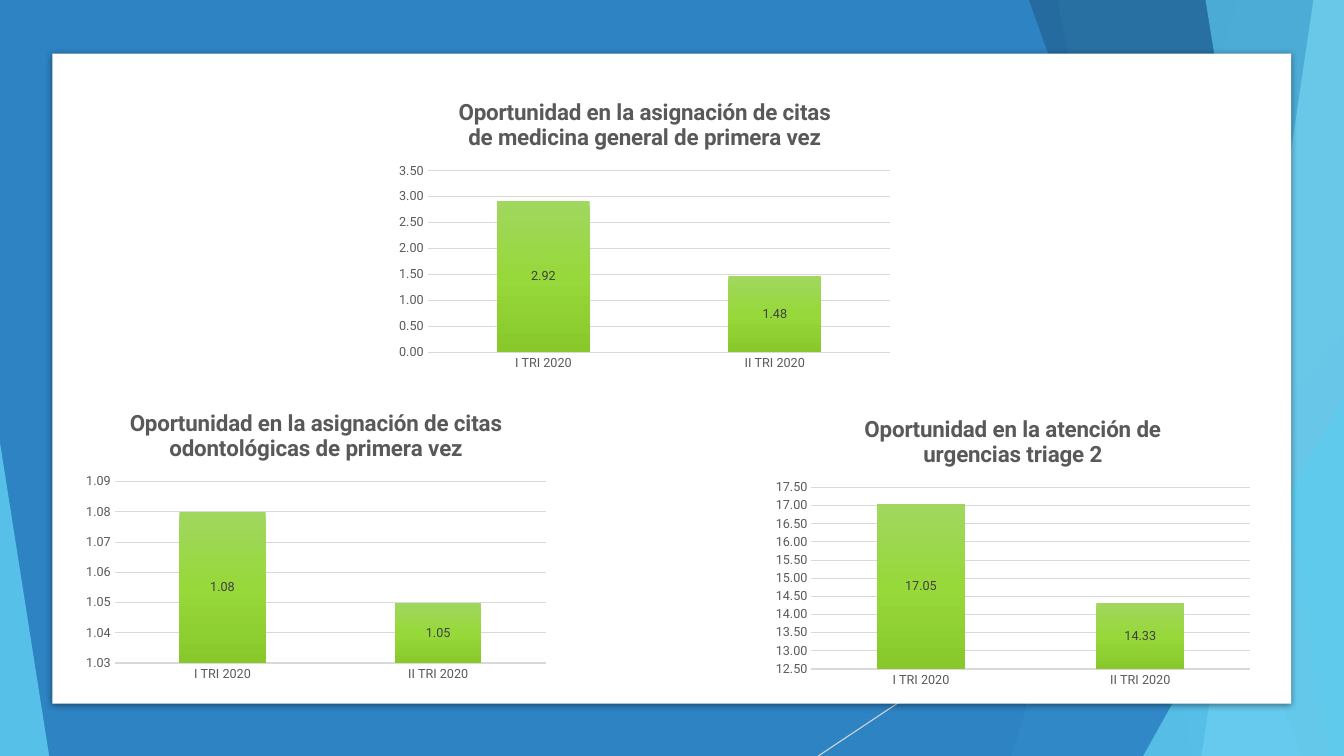
import pptx
import pptx.util
import pptx.chart.data
import pptx.dml.color
import pptx.enum.chart
import pptx.enum.shapes
import pptx.oxml
import pptx.oxml.ns

Cm, Pt = pptx.util.Cm, pptx.util.Pt
SHAPE = pptx.enum.shapes.MSO_SHAPE

# Content
FONT = "Roboto"
QUARTERS = ["I TRI 2020", "II TRI 2020"]
# title, values, (left, top, width, height) in cm, (axis min, max, step)
CHARTS = [
    ("Oportunidad en la asignación de citas de medicina general de primera vez",
     (2.92, 1.48), (9.8, 2.08, 12.9, 7.42), (0, 3.5, 0.5)),
    ("Oportunidad en la asignación de citas odontológicas de primera vez",
     (1.08, 1.05), (1.93, 9.91, 12.07, 7.42), (1.03, 1.09, 0.01)),
    ("Oportunidad en la atención de urgencias triage 2",
     (17.05, 14.33), (19.3, 10.06, 12.45, 7.42), (12.5, 17.5, 0.5)),
]
COLORS = {
    "blue": "2E83C3", "navy": "226292", "sky": "5FCBEF", "pale": "9FE0F5",
    "white": "FFFFFF", "rule": "D9D9D9", "text": "595959", "label": "404040",
    "shadow": "000000",
}
BAR_GRADIENT = [(0, "A1D75F"), (50, "97D83A"), (100, "88C82B")]

# Facets, back to front: bands reach the right edge from (top x, bottom x);
# triangles have (left, width, height, apex) and stand on the bottom edge
SLIDE_W, SLIDE_H = 33.87, 19.05
FACETS = [
    ("band", (31.19, 25.5), "sky", 30),
    ("band", (26.67, 30.05), "sky", 20),
    ("triangle", (24.82, 9.05, 10.59, 1), "blue", 72),
    ("band", (25.93, 32.79), "navy", 70),
    ("band", (33.1, 30.28), "pale", 70),
    ("band", (30.38, 33.48), "sky", 65),
    ("triangle", (28.81, 5.06, 9.07, 1), "sky", 80),
    ("triangle", (0, 1.24, 7.9, 0), "sky", 85),
]


def rgb(name):
    return pptx.dml.color.RGBColor.from_string(COLORS[name])


def xml(tag, body, attrs=""):
    ns = pptx.oxml.ns.nsdecls("a")
    return pptx.oxml.parse_xml(f"<a:{tag} {ns} {attrs}>{body}</a:{tag}>")


def paint(sp, color, opacity=100):
    sp.shadow.inherit = False
    sp.line.fill.background()
    sp.fill.solid()
    sp.fill.fore_color.rgb = rgb(color)
    if opacity < 100:
        clr = sp.fill._xPr.find(".//" + pptx.oxml.ns.qn("a:srgbClr"))
        clr.append(xml("alpha", "", f'val="{opacity * 1000}"'))


def set_font(font, size, color, bold=False):
    font.name, font.size, font.bold = FONT, Pt(size), bold
    font.color.rgb = rgb(color)


def add_rect(s, box, color):
    sp = s.shapes.add_shape(SHAPE.RECTANGLE, *map(Cm, box))
    paint(sp, color)
    return sp


def add_facet(s, kind, geometry, color, opacity):
    if kind == "band":
        top_x, bottom_x = geometry
        unit = 100  # drawing units per cm
        pts = [(round(x * unit), round(y * unit)) for x, y in
               [(top_x, 0), (SLIDE_W, 0), (SLIDE_W, SLIDE_H), (bottom_x, SLIDE_H)]]
        builder = s.shapes.build_freeform(*pts[0], scale=Cm(1) / unit)
        builder.add_line_segments(pts[1:], close=True)
        sp = builder.convert_to_shape()
    else:
        left, width, height, apex = geometry
        sp = s.shapes.add_shape(SHAPE.ISOSCELES_TRIANGLE, Cm(left),
                                Cm(SLIDE_H - height), Cm(width), Cm(height))
        sp.adjustments[0] = apex
    paint(sp, color, opacity)


def add_bar_chart(s, title, values, box, scale):
    data = pptx.chart.data.CategoryChartData(number_format="0.00")
    data.categories = QUARTERS
    data.add_series(title, values)
    kind = pptx.enum.chart.XL_CHART_TYPE.COLUMN_STACKED
    chart = s.shapes.add_chart(kind, *map(Cm, box), data).chart
    set_font(chart.font, 10, "text")
    chart.has_legend = False

    # Title
    chart.has_title = True
    chart.chart_title.include_in_layout = False
    r = chart.chart_title.text_frame.paragraphs[0].add_run()
    r.text = title
    set_font(r.font, 16, "text", bold=True)

    # Axes
    cat, val = chart.category_axis, chart.value_axis
    for axis in (cat, val):
        axis.major_tick_mark = axis.minor_tick_mark = pptx.enum.chart.XL_TICK_MARK.NONE
        set_font(axis.tick_labels.font, 9, "text")
    cat.format.line.color.rgb = rgb("rule")
    cat.format.line.width = Pt(1)
    val.format.line.fill.background()
    val.minimum_scale, val.maximum_scale, val.major_unit = scale
    val.tick_labels.number_format = "0.00"
    val.tick_labels.number_format_is_linked = False
    val.major_gridlines.format.line.color.rgb = rgb("rule")
    val.major_gridlines.format.line.width = Pt(0.75)

    # Bars and their labels
    plot = chart.plots[0]
    plot.gap_width, plot.overlap, plot.vary_by_categories = 150, 100, False
    stops = "".join(f'<a:gs pos="{pos * 1000}"><a:srgbClr val="{c}"/></a:gs>'
                    for pos, c in BAR_GRADIENT)
    series = plot.series[0]
    series.invert_if_negative = False
    series.format.fill._xPr.append(
        xml("gradFill", f'<a:gsLst>{stops}</a:gsLst><a:lin ang="5400000" scaled="0"/>'))
    labels = series.data_labels
    labels.show_value = True
    labels.number_format, labels.number_format_is_linked = "0.00", False
    labels.position = pptx.enum.chart.XL_LABEL_POSITION.CENTER
    set_font(labels.font, 9, "label")


def main():
    prs = pptx.Presentation()
    prs.slide_width, prs.slide_height = Cm(SLIDE_W), Cm(SLIDE_H)
    s = prs.slides.add_slide(prs.slide_layouts[6])

    # Backdrop
    add_rect(s, (0, 0, SLIDE_W, SLIDE_H), "blue")
    ray = s.shapes.add_connector(pptx.enum.shapes.MSO_CONNECTOR.STRAIGHT,
                                 Cm(SLIDE_W), Cm(10.24), Cm(20.62), Cm(SLIDE_H))
    ray.line.color.rgb = rgb("rule")
    ray.line.width = Pt(0.75)
    ray._element.spPr.append(xml("effectLst", ""))
    for facet in FACETS:
        add_facet(s, *facet)

    # White panel with a soft shadow
    panel = add_rect(s, (1.32, 1.35, 31.22, 16.38), "white")
    effects = panel._element.spPr.find(pptx.oxml.ns.qn("a:effectLst"))
    effects.append(xml(
        "outerShdw",
        f'<a:srgbClr val="{COLORS["shadow"]}"><a:alpha val="43000"/></a:srgbClr>',
        f'blurRad="{Pt(5)}" dist="{Pt(1.4)}" dir="5400000" rotWithShape="0"'))

    # Charts
    for chart in CHARTS:
        add_bar_chart(s, *chart)

    prs.save("out.pptx")


if __name__ == "__main__":
    main()
